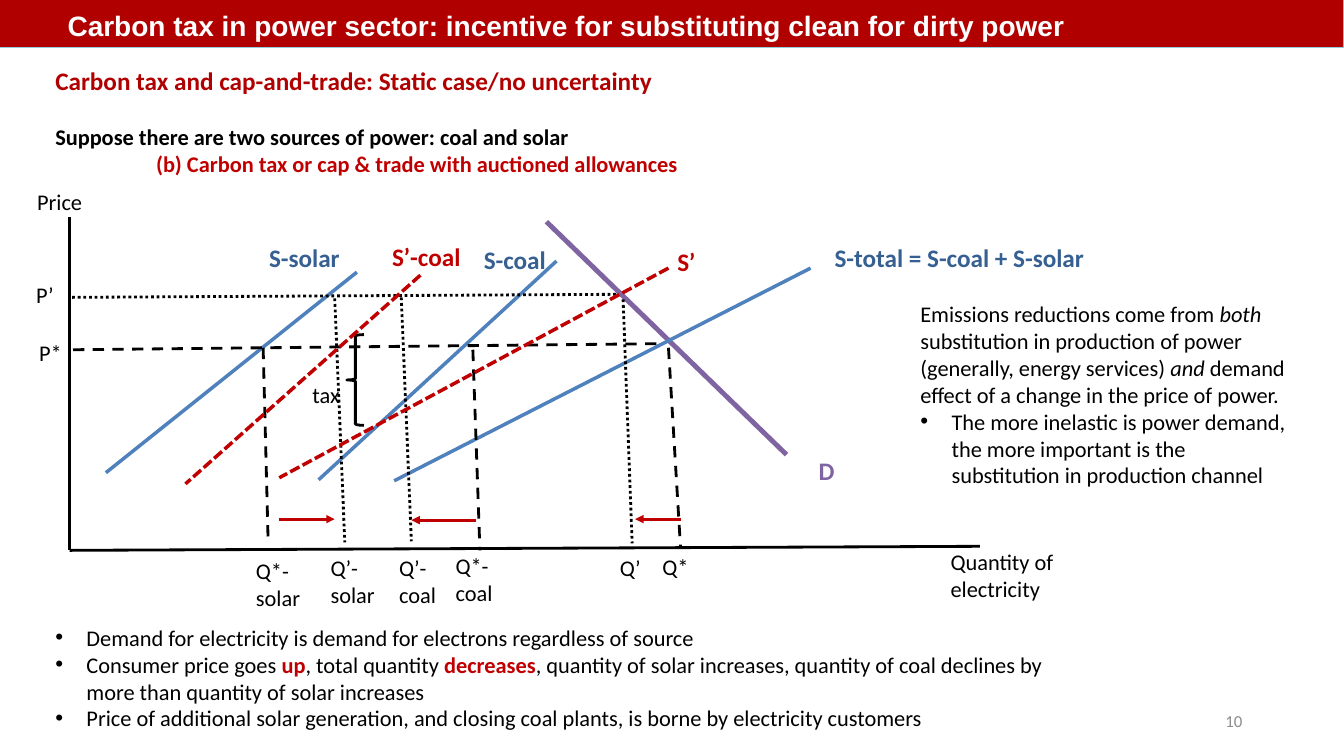
from lxml import etree
from pptx import Presentation
from pptx import util as u
from pptx.dml.color import RGBColor
from pptx.enum import dml, shapes, text
from pptx.oxml.ns import qn

RED, CRIMSON, BLACK, WHITE = "B00000", "C00000", "000000", "FFFFFF"
BLUE, NAVY, PURPLE, GREY = "4F81BD", "376092", "8064A2", "8C8C8C"
DASH = dml.MSO_LINE.DASH
DOTS = dml.MSO_LINE.ROUND_DOT
SHORT_DASH = dml.MSO_LINE.SQUARE_DOT


def colour(value):
    return RGBColor.from_string(value)


def set_font(font, size, fill, bold=False, name="Calibri"):
    font.name, font.size, font.bold = name, u.Pt(size), bold
    font.color.rgb = colour(fill)


def add_box(page, left, top, width, height, wrap=True):
    box = page.shapes.add_textbox(*map(u.Inches, (left, top, width, height)))
    box.text_frame.word_wrap = wrap
    return box.text_frame


def add_label(page, words, left, top, width, height=0.37, size=16, fill=BLACK, bold=False):
    frame = add_box(page, left, top, width, height)
    para = frame.paragraphs[0]
    para.text = words
    set_font(para.font, size, fill, bold)
    return frame


def add_line(page, start, end, fill, width=2, dash=None, arrow=False):
    points = map(u.Inches, (*start, *end))
    line = page.shapes.add_connector(shapes.MSO_CONNECTOR.STRAIGHT, *points)
    line.line.color.rgb = colour(fill)
    line.line.width = u.Pt(width)
    if dash:
        line.line.dash_style = dash
    if arrow:
        etree.SubElement(line.line._get_or_add_ln(), qn("a:tailEnd"), type="triangle")
    etree.SubElement(line._element.spPr, qn("a:effectLst"))


def add_paragraphs(frame, paragraphs):
    """Each paragraph is (bulleted, spans); each span is (words, emphasis)."""
    for index, (bulleted, spans) in enumerate(paragraphs):
        para = frame.add_paragraph() if index else frame.paragraphs[0]
        set_font(para.font, 16, BLACK)
        if bulleted:
            props = para._p.get_or_add_pPr()
            props.set("marL", str(u.Inches(0.31)))
            props.set("indent", str(u.Inches(-0.31)))
            bullet = etree.Element(qn("a:buChar"), char="•")
            font = etree.Element(qn("a:buFont"), typeface="Arial")
            props.insert(0, font)
            props.insert(1, bullet)
        for words, emphasis in spans:
            span = para.add_run()
            span.text = words
            if emphasis == "italic":
                span.font.italic = True
            elif emphasis == "red":
                span.font.bold = True
                span.font.color.rgb = colour(CRIMSON)


def add_title_bar(page):
    bar = page.shapes.add_shape(shapes.MSO_SHAPE.RECTANGLE, 0, 0, u.Inches(13.33), u.Inches(0.47))
    bar.shadow.inherit = False
    bar.fill.solid()
    bar.fill.fore_color.rgb = colour(RED)
    bar.line.color.rgb = colour("93CDDD")
    bar.line.width = u.Pt(0)
    frame = bar.text_frame
    frame.margin_left = u.Inches(0.67)
    frame.vertical_anchor = text.MSO_ANCHOR.BOTTOM
    para = frame.paragraphs[0]
    para.text = "Carbon tax in power sector: incentive for substituting clean for dirty power"
    para.alignment = text.PP_ALIGN.LEFT
    set_font(para.font, 20, WHITE, True, "Arial")


def add_heading(page):
    frame = add_box(page, 0.45, 0.6, 6.77, 1.21, wrap=False)
    lines = [
        ("Carbon tax and cap-and-trade: Static case/no uncertainty", 18, RED),
        ("Suppose there are two sources of power: coal and solar", 16, BLACK),
        ("(b) Carbon tax or cap & trade with auctioned allowances", 16, CRIMSON),
    ]
    for index, (words, size, fill) in enumerate(lines):
        para = frame.add_paragraph() if index else frame.paragraphs[0]
        para.text = words
        set_font(para.font, size, fill, True)
    frame.paragraphs[1].space_before = u.Pt(19.5)
    frame.paragraphs[2]._p.get_or_add_pPr().set("marL", str(u.Inches(1)))


def add_tax_brace(page):
    place = map(u.Inches, (3.44, 3.32, 0.17, 0.9))
    brace = page.shapes.add_shape(shapes.MSO_SHAPE.LEFT_BRACE, *place)
    brace.shadow.inherit = False
    brace.fill.background()
    brace.line.color.rgb = colour(BLACK)
    brace.line.width = u.Pt(2)


def add_diagram(page):
    # Demand, axes and supply curves
    add_line(page, (5.42, 2.2), (7.8, 4.51), PURPLE, 3.5)
    add_line(page, (0.69, 2.15), (0.69, 5.46), BLACK)
    add_line(page, (9.72, 5.42), (0.69, 5.46), BLACK)
    for start, end in [((3.54, 2.7), (1.05, 4.69)), ((5.52, 2.59), (3.16, 4.76)),
                       ((8.04, 2.66), (3.91, 4.77))]:
        add_line(page, start, end, BLUE, 2.5)

    # Equilibrium before the tax (dashed) and after it (dotted)
    for start, end in [((6.51, 3.41), (0.72, 3.47)), ((6.63, 3.45), (6.75, 5.44)),
                       ((4.69, 3.47), (4.76, 5.46)), ((2.61, 3.45), (2.66, 5.39))]:
        add_line(page, start, end, BLACK, dash=DASH)
    for start, end in [((6.11, 2.92), (0.69, 2.95)), ((6.18, 2.97), (6.27, 5.39)),
                       ((3.32, 2.96), (3.42, 5.38)), ((3.98, 2.95), (4.08, 5.37))]:
        add_line(page, start, end, BLACK, dash=DOTS)
    add_tax_brace(page)

    # Supply with the tax, and shifts in quantity
    for start, end in [((4.17, 2.73), (1.84, 4.8)), ((6.63, 2.66), (2.77, 4.74))]:
        add_line(page, start, end, CRIMSON, 2.5, SHORT_DASH)
    for left, right, height in [(2.77, 3.32, 5.15), (4.72, 4.08, 5.16), (6.75, 6.3, 5.15)]:
        add_line(page, (left, height), (right, height), CRIMSON, arrow=True)

    # Curve names
    for words, left, top, width, fill in [
        ("S-solar", 2.57, 2.36, 1, NAVY), ("S-coal", 4.7, 2.37, 1, NAVY),
        ("S-total = S-coal + S-solar", 8.18, 2.36, 2.73, NAVY),
        ("S’-coal", 3.79, 2.34, 0.95, CRIMSON), ("S’", 6.62, 2.39, 0.73, CRIMSON),
        ("D", 8.02, 4.47, 1.27, PURPLE),
    ]:
        add_label(page, words, left, top, width, 0.4, 18, fill, True)

    # Prices, quantities and axis names
    for words, left, top, width in [
        ("Price", 0.27, 1.82, 0.87), ("P’", 0.26, 2.74, 0.64), ("P*", 0.29, 3.32, 0.64),
        ("tax", 3, 3.73, 0.87), ("Q’", 6.05, 5.45, 0.55), ("Q*", 6.47, 5.44, 0.55),
    ]:
        add_label(page, words, left, top, width)
    for words, left, top, width in [
        ("Q*-solar", 2.44, 5.48, 0.72), ("Q’-solar", 3.18, 5.45, 0.72),
        ("Q’-coal", 3.86, 5.45, 0.72), ("Q*-coal", 4.42, 5.43, 0.69),
        ("Quantity of electricity", 9.33, 5.39, 1.6),
    ]:
        add_label(page, words, left, top, width, 0.64)


def main():
    deck = Presentation()
    deck.slide_width, deck.slide_height = u.Inches(13.33), u.Inches(7.5)
    page = deck.slides.add_slide(deck.slide_layouts[6])

    add_title_bar(page)
    add_heading(page)
    add_diagram(page)

    # Commentary beside and below the diagram
    add_paragraphs(add_box(page, 9.03, 2.93, 3.89, 1.99), [
        (False, [("Emissions reductions come from ", None), ("both", "italic"),
                 (" substitution in production of power (generally, energy services) ", None),
                 ("and", "italic"),
                 (" demand effect of a change in the price of power.", None)]),
        (True, [("The more inelastic is power demand, the more important is the "
                 "substitution in production channel", None)]),
    ])
    add_paragraphs(add_box(page, 0.45, 6.14, 10.4, 1.18), [
        (True, [("Demand for electricity is demand for electrons regardless of source", None)]),
        (True, [("Consumer price goes ", None), ("up", "red"), (", total quantity ", None),
                ("decreases", "red"),
                (", quantity of solar increases, quantity of coal declines by more than "
                 "quantity of solar increases", None)]),
        (True, [("Price of additional solar generation, and closing coal plants, is borne "
                 "by electricity customers", None)]),
    ])

    # Page number
    number = add_label(page, "10", 9.42, 6.95, 3, 0.4, 12, GREY)
    number.vertical_anchor = text.MSO_ANCHOR.MIDDLE
    number.paragraphs[0].alignment = text.PP_ALIGN.RIGHT

    deck.save("out.pptx")


if __name__ == "__main__":
    main()
